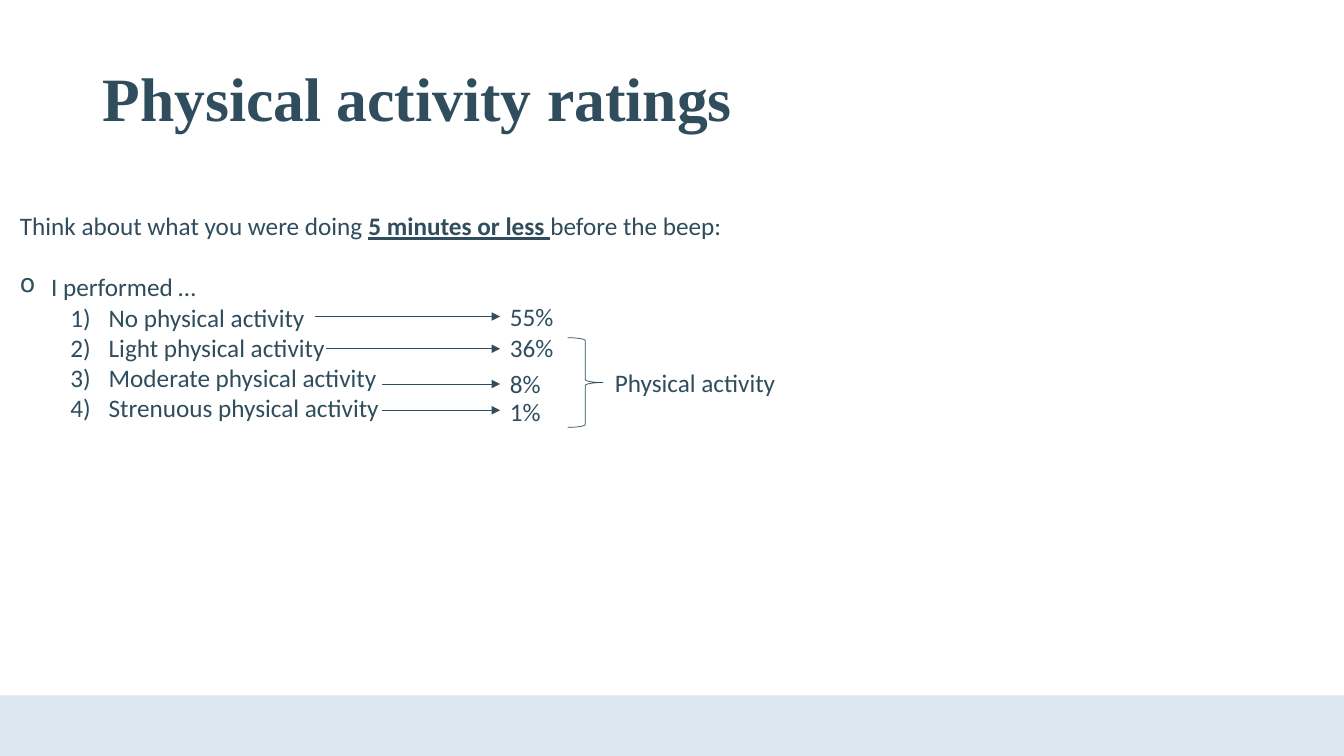
"""Build the slide on physical activity ratings."""
import dataclasses
import typing

import lxml.etree
import pptx
import pptx.dml.color
import pptx.enum.shapes
import pptx.enum.text
import pptx.oxml.ns
import pptx.util

Inches = pptx.util.Inches
Pt = pptx.util.Pt
SHAPES = pptx.enum.shapes.MSO_SHAPE
INK = "2F4D5D"
BODY = {"name": "Calibri", "size": Pt(18)}
EMPHASIS = {**BODY, "bold": True, "underline": True}
HEADING = {"name": "Times New Roman", "size": Pt(44), "bold": True}


@dataclasses.dataclass(frozen=True)
class Rating:
    activity: str
    share: str
    share_top: float
    arrow_left: float
    arrow_y: float


RATINGS = [
    Rating("No physical activity", "55%", 2.94, 3.12, 3.14),
    Rating("Light physical activity", "36%", 3.25, 3.23, 3.46),
    Rating("Moderate physical activity", "8%", 3.61, 3.79, 3.81),
    Rating("Strenuous physical activity", "1%", 3.88, 3.79, 4.07),
]
SHARE_LEFT = 4.96


def rgb(value: str) -> pptx.dml.color.RGBColor:
    return pptx.dml.color.RGBColor.from_string(value)


def write(paragraph, text: str, style: dict[str, typing.Any]) -> None:
    run = paragraph.add_run()
    run.text = text
    for attribute, value in style.items():
        setattr(run.font, attribute, value)
    run.font.color.rgb = rgb(INK)


def add_text(slide, left: float, top: float, width: float, height: float):
    frame = slide.shapes.add_textbox(
        Inches(left), Inches(top), Inches(width), Inches(height)).text_frame
    frame.word_wrap = True
    return frame


def add_bullet(paragraph, margin: float, hanging: float, tag: str, **values: str) -> None:
    properties = paragraph._p.get_or_add_pPr()
    properties.set("marL", str(Inches(margin)))
    properties.set("indent", str(-Inches(hanging)))
    lxml.etree.SubElement(properties, pptx.oxml.ns.qn(tag), values)


def add_arrow(slide, rating: Rating) -> None:
    arrow = slide.shapes.add_connector(
        pptx.enum.shapes.MSO_CONNECTOR.STRAIGHT, Inches(rating.arrow_left),
        Inches(rating.arrow_y), Inches(SHARE_LEFT), Inches(rating.arrow_y))
    arrow.line.color.rgb = rgb(INK)
    arrow.line.width = Pt(0.5)
    lxml.etree.SubElement(
        arrow.line._get_or_add_ln(), pptx.oxml.ns.qn("a:tailEnd"), {"type": "triangle"})
    lxml.etree.SubElement(arrow._element.spPr, pptx.oxml.ns.qn("a:effectLst"))


def add_shape(slide, kind, left: float, top: float, width: float, height: float):
    shape = slide.shapes.add_shape(
        kind, Inches(left), Inches(top), Inches(width), Inches(height))
    shape.shadow.inherit = False
    return shape


def add_question(slide) -> None:
    question = add_text(slide, 0.1, 2.04, 7.5, 2.52)
    prompt = question.paragraphs[0]
    write(prompt, "Think about what you were doing ", BODY)
    write(prompt, "5 minutes or less ", EMPHASIS)
    write(prompt, "before the beep:", BODY)
    stem = question.add_paragraph()
    stem.space_before = Pt(22)
    add_bullet(stem, 0.31, 0.31, "a:buChar", char="o")
    write(stem, "I performed …", BODY)
    for rating in RATINGS:
        option = question.add_paragraph()
        option.level = 1
        add_bullet(option, 0.88, 0.38, "a:buAutoNum", type="arabicParenR")
        write(option, rating.activity, BODY)


def main() -> None:
    deck = pptx.Presentation()
    deck.slide_width, deck.slide_height = Inches(13.33), Inches(7.5)
    slide = deck.slides.add_slide(deck.slide_layouts[6])

    title = add_text(slide, 0.92, 0.28, 11.5, 1.45)
    title.vertical_anchor = pptx.enum.text.MSO_ANCHOR.MIDDLE
    title.paragraphs[0].line_spacing = 0.9
    write(title.paragraphs[0], "Physical activity ratings", HEADING)

    footer_band = add_shape(slide, SHAPES.RECTANGLE, 0, 6.9, 13.33, 0.6)
    footer_band.fill.solid()
    footer_band.fill.fore_color.rgb = rgb("DCE7F0")
    footer_band.line.fill.background()

    add_question(slide)
    for rating in RATINGS:
        add_arrow(slide, rating)
        share = add_text(slide, SHARE_LEFT, rating.share_top, 0.86, 0.4)
        write(share.paragraphs[0], rating.share, BODY)

    active_brace = add_shape(slide, SHAPES.RIGHT_BRACE, 5.63, 3.35, 0.35, 0.89)
    active_brace.fill.background()
    active_brace.line.color.rgb = rgb(INK)
    active_brace.line.width = Pt(0.5)
    active_label = add_text(slide, 6, 3.59, 1.86, 0.4)
    write(active_label.paragraphs[0], "Physical activity", BODY)

    deck.save("out.pptx")


if __name__ == "__main__":
    main()
